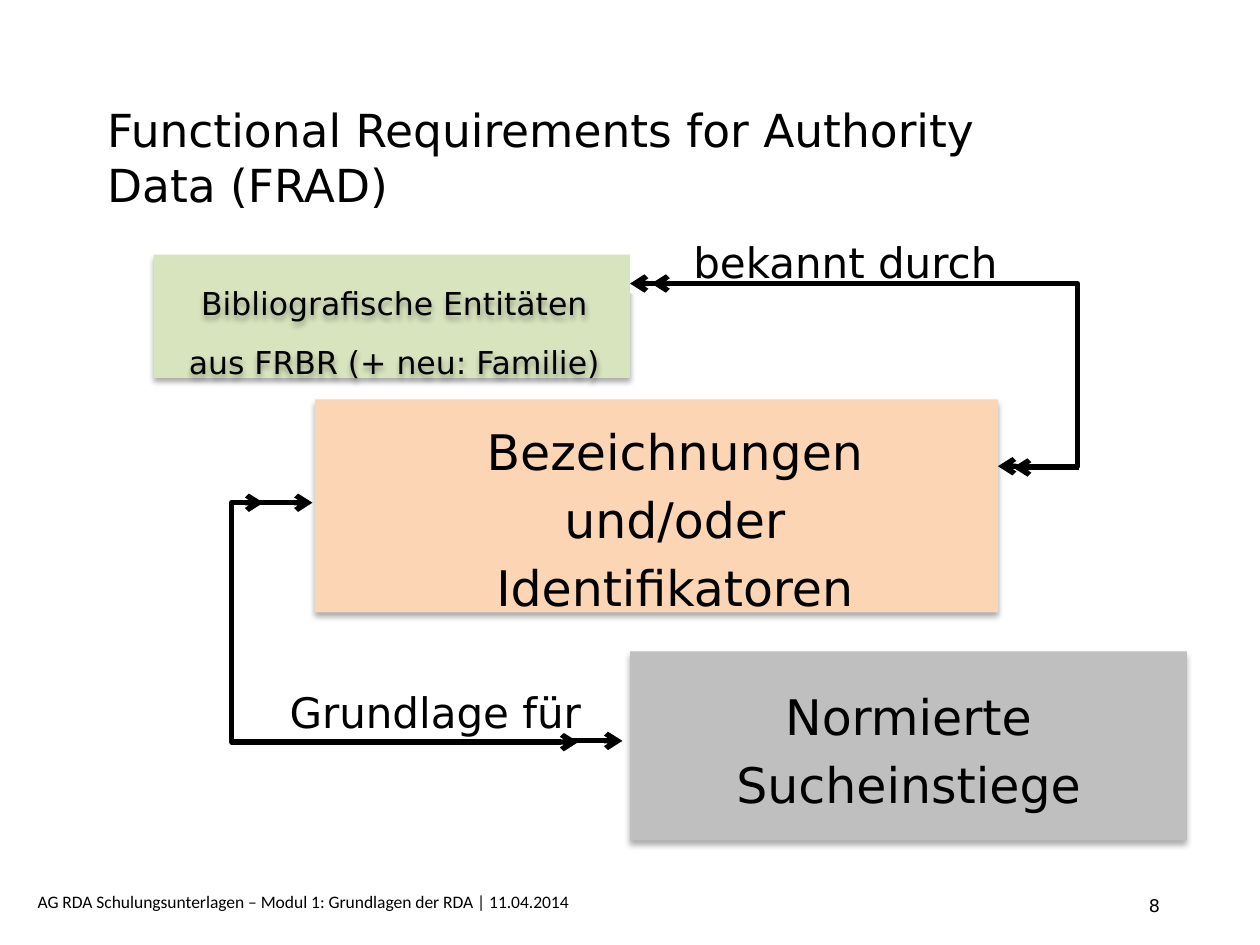
"""Build the FRAD slide: three linked blocks with labelled arrows."""
from lxml import etree
from pptx import Presentation
from pptx import util as u
from pptx.dml.color import RGBColor
from pptx.enum import shapes, text
from pptx.oxml import parse_xml
from pptx.oxml.ns import nsdecls, qn

COLORS = {"ink": "000000", "paper": "FFFFFF", "peach": "FCD5B5",
          "green": "D7E4BD", "grey": "BFBFBF"}
SANS = "DejaVu Sans"
SHADOW = (f'<a:effectLst {nsdecls("a")}><a:outerShdw blurRad="44450" dist="27940" '
          'dir="5400000" algn="ctr" rotWithShape="0"><a:srgbClr val="000000">'
          '<a:alpha val="32000"/></a:srgbClr></a:outerShdw></a:effectLst>')

deck = Presentation()
deck.slide_width, deck.slide_height = u.Inches(10), u.Inches(7.5)
page = deck.slides.add_slide(deck.slide_layouts[5])
column, row = deck.slide_width / 100, deck.slide_height / 75


def place(left, top, width, height):
    return [int(n * unit) for n, unit in
            zip((left, top, width, height), (column, row, column, row))]


def write(box, words, size, font=SANS, align=text.PP_ALIGN.LEFT, spacing=1):
    frame = box.text_frame
    frame.word_wrap = True
    frame.auto_size = text.MSO_AUTO_SIZE.NONE
    frame.vertical_anchor = text.MSO_ANCHOR.TOP
    frame.text = words
    para = frame.paragraphs[0]
    para.alignment = align
    para.line_spacing = spacing
    para.space_before = u.Pt(0)
    para.font.name, para.font.size = font, u.Pt(size)
    para.font.color.rgb = RGBColor.from_string(COLORS["ink"])


title = page.shapes.title
title.left, title.top, title.width, title.height = place(7.5, 7.6, 75.8, 9.7)
write(title, "Functional Requirements for Authority Data (FRAD)", 26)

for color, area in [("peach", (25, 31.7, 54.2, 16.9)),
                    ("green", (12.2, 20.2, 37.8, 9.8)),
                    ("grey", (50, 51.7, 44.2, 15))]:
    panel = page.shapes.add_shape(shapes.MSO_SHAPE.RECTANGLE, *place(*area))
    panel.fill.solid()
    panel.fill.fore_color.rgb = RGBColor.from_string(COLORS[color])
    panel.line.fill.background()
    panel._element.spPr.append(parse_xml(SHADOW))

for words, area, size, spacing, fill, shadowed in [
    ("bekannt durch", (50, 18.3, 34.2, 5), 24, 1, "paper", False),
    ("Bibliografische Entitäten aus FRBR (+ neu: Familie)",
     (13.2, 20.4, 36.2, 10.1), 18, 1.55, None, True),
    ("Bezeichnungen und/oder Identifikatoren",
     (31.9, 32.3, 43.3, 16.6), 28, 1.15, None, False),
    ("Normierte Sucheinstiege", (52.5, 53.3, 39.2, 11.4), 28, 1.15, "grey", False),
    ("Grundlage für", (21.6, 54, 25.9, 5), 24, 1, None, False),
]:
    label = page.shapes.add_textbox(*place(*area))
    write(label, words, size, align=text.PP_ALIGN.CENTER, spacing=spacing)
    if fill:
        label.fill.solid()
        label.fill.fore_color.rgb = RGBColor.from_string(COLORS[fill])
    if shadowed:
        label._element.spPr.append(parse_xml(SHADOW))

for ends, bend in [((50, 22.5, 79.2, 37), 121600),
                   ((20.9, 39.9, 45.9, 58.9), -10000),
                   ((19, 39.9, 24.8, 39.9), None),
                   ((56.9, 22.5, 51.7, 22.5), None),
                   ((85.6, 37.1, 80.4, 37.1), None),
                   ((45.3, 58.8, 49.4, 58.8), None)]:
    kind = shapes.MSO_CONNECTOR.ELBOW if bend else shapes.MSO_CONNECTOR.STRAIGHT
    arrow = page.shapes.add_connector(kind, *place(*ends))
    arrow.line.width = u.Pt(3)
    arrow.line.color.rgb = RGBColor.from_string(COLORS["ink"])
    outline = arrow.line._get_or_add_ln()
    for tip in ["headEnd", "tailEnd"] if bend else ["tailEnd"]:
        etree.SubElement(outline, qn(f"a:{tip}"), type="arrow")
    properties = arrow._element.spPr
    etree.SubElement(properties, qn("a:effectLst"))
    if bend:
        guides = properties.find(qn("a:prstGeom")).find(qn("a:avLst"))
        etree.SubElement(guides, qn("a:gd"), name="adj1", fmla=f"val {bend}")

footer = page.shapes.add_textbox(*place(2, 70.2, 70.1, 2.7))
write(footer, "AG RDA Schulungsunterlagen – Modul 1: Grundlagen der RDA | 11.04.2014",
      10, font="Calibri")
number = page.shapes.add_textbox(*place(90.2, 70.5, 7.9, 3.2))
write(number, "8", 10)

deck.save("out.pptx")
